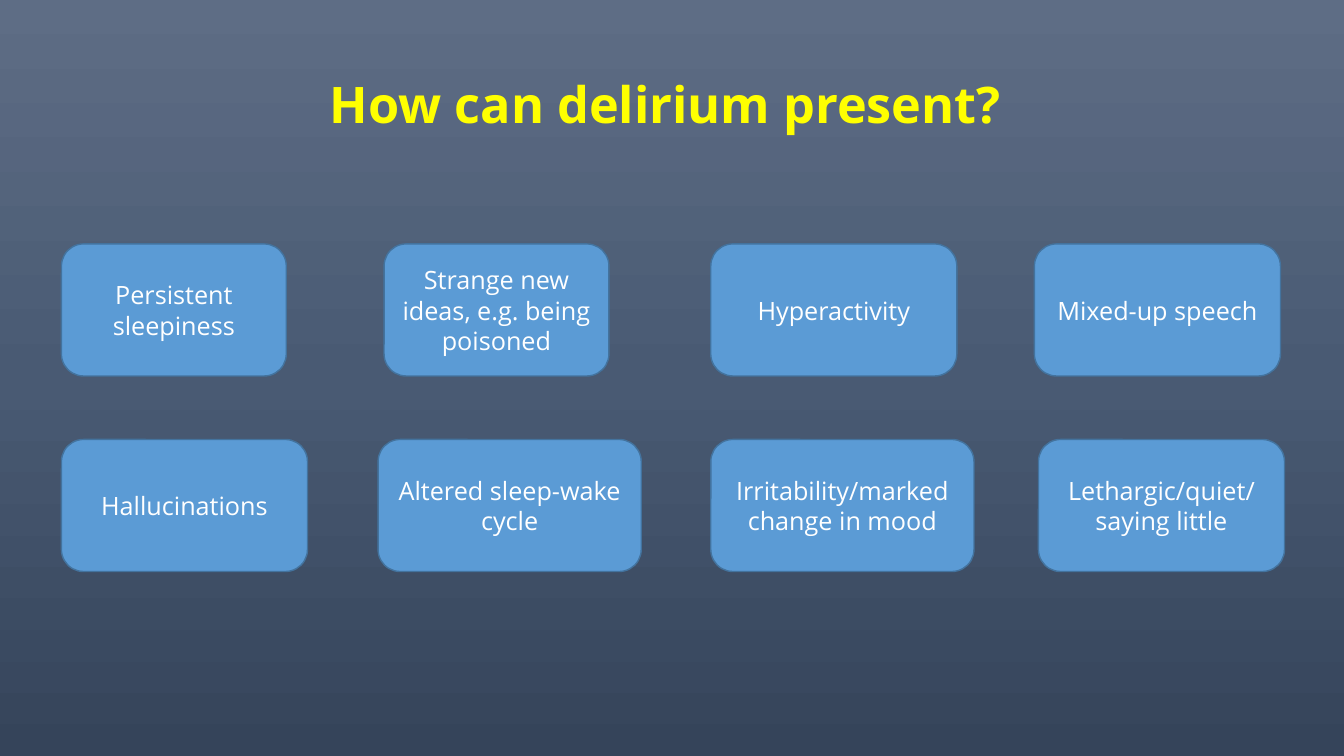
from copy import deepcopy
from dataclasses import dataclass

from pptx import Presentation
from pptx.dml.color import RGBColor
from pptx.enum.shapes import MSO_SHAPE
from pptx.enum.text import MSO_ANCHOR, PP_ALIGN
from pptx.oxml.ns import qn
from pptx.slide import Slide
from pptx.text.text import TextFrame
from pptx.util import Inches, Pt

ROUNDED = MSO_SHAPE.ROUNDED_RECTANGLE
MIDDLE = MSO_ANCHOR.MIDDLE
CENTER = PP_ALIGN.CENTER

TITLE_ONLY_LAYOUT = 5
BACKGROUND_STOPS = ((0, "5E6D85"), (0.5, "495A73"), (1, "35445A"))
TITLE_FORMAT = {"name": "Open Sans", "size": Pt(36), "bold": True}
SIGN_FORMAT = {"name": "Open Sans", "size": Pt(18), "bold": False}
SIGN_HEIGHT = 1.31
UPPER_ROW = 2.42
LOWER_ROW = 4.36


@dataclass(frozen=True)
class Sign:
    text: str
    left: float
    top: float
    width: float


SIGNS = (
    Sign("Persistent sleepiness", 0.61, UPPER_ROW, 2.23),
    Sign("Strange new ideas, e.g. being poisoned", 3.81, UPPER_ROW, 2.23),
    Sign("Hyperactivity", 7.05, UPPER_ROW, 2.44),
    Sign("Mixed-up speech", 10.26, UPPER_ROW, 2.44),
    Sign("Hallucinations", 0.61, LOWER_ROW, 2.44),
    Sign("Altered sleep-wake cycle", 3.75, LOWER_ROW, 2.61),
    Sign("Irritability/marked change in mood", 7.05, LOWER_ROW, 2.61),
    Sign("Lethargic/quiet/saying little", 10.3, LOWER_ROW, 2.44),
)


def color(value: str) -> RGBColor:
    return RGBColor.from_string(value)


def write_text(frame: TextFrame, text: str, font_format: dict, text_color: str) -> None:
    frame.text = text
    frame.word_wrap = True
    frame.vertical_anchor = MIDDLE
    paragraph = frame.paragraphs[0]
    paragraph.alignment = CENTER
    font = paragraph.runs[0].font
    for attribute, value in font_format.items():
        setattr(font, attribute, value)
    font.color.rgb = color(text_color)


def paint_background(slide: Slide) -> None:
    fill = slide.background.fill
    fill.gradient()
    fill.gradient_angle = 270
    stop_list = slide.element.find(".//" + qn("a:gsLst"))
    stop_list.insert(1, deepcopy(stop_list[0]))
    for stop, (position, value) in zip(fill.gradient_stops, BACKGROUND_STOPS):
        stop.position = position
        stop.color.rgb = color(value)


def add_title(slide: Slide) -> None:
    title = slide.shapes.title
    title.left, title.top = Inches(0.85), Inches(0.34)
    title.width, title.height = Inches(11.5), Inches(1.45)
    write_text(title.text_frame, "How can delirium present?", TITLE_FORMAT, "FFFF00")
    title.text_frame.paragraphs[0].line_spacing = 0.9


def add_sign(slide: Slide, sign: Sign) -> None:
    shape = slide.shapes.add_shape(
        ROUNDED, Inches(sign.left), Inches(sign.top), Inches(sign.width), Inches(SIGN_HEIGHT)
    )
    shape.shadow.inherit = False
    shape.fill.solid()
    shape.fill.fore_color.rgb = color("5B9BD5")
    shape.line.color.rgb = color("43739E")
    shape.line.width = Pt(1)
    write_text(shape.text_frame, sign.text, SIGN_FORMAT, "FFFFFF")


def main() -> None:
    presentation = Presentation()
    presentation.slide_width = Inches(13.33)
    presentation.slide_height = Inches(7.5)
    slide = presentation.slides.add_slide(presentation.slide_layouts[TITLE_ONLY_LAYOUT])
    paint_background(slide)
    add_title(slide)
    for sign in SIGNS:
        add_sign(slide, sign)
    presentation.save("out.pptx")


if __name__ == "__main__":
    main()
